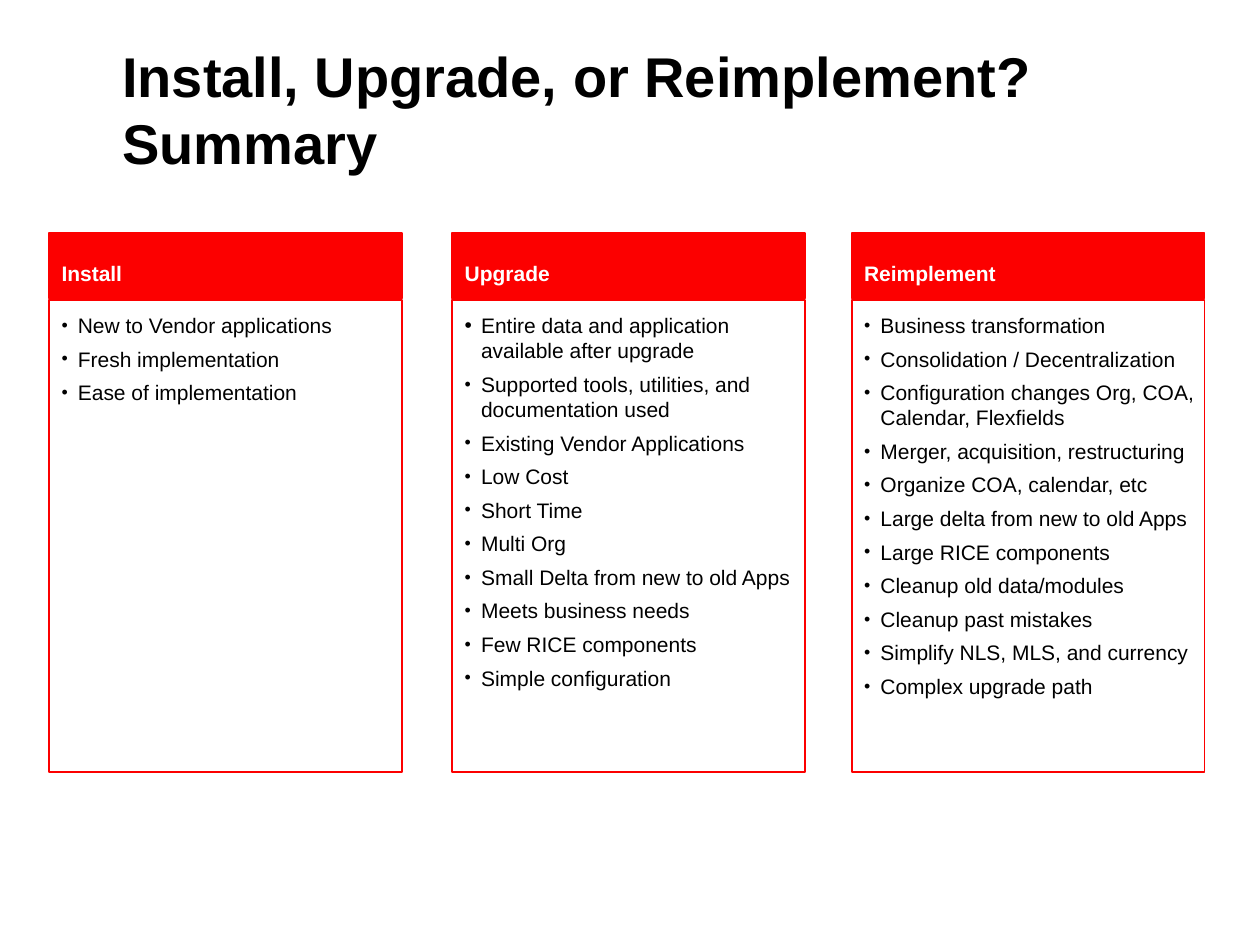
from lxml.etree import SubElement
from pptx import Presentation
from pptx.dml.color import RGBColor
from pptx.enum.shapes import MSO_SHAPE
from pptx.enum.text import MSO_ANCHOR, MSO_AUTO_SIZE, PP_ALIGN
from pptx.oxml.ns import qn
from pptx.util import Inches, Pt

RED, WHITE, BLACK = "FC0000", "FFFFFF", "000000"
HEADER_TOP, HEADER_HEIGHT = 1.85, 0.52
BODY_TOP, BODY_HEIGHT = 2.38, 3.75
COLUMN_WIDTH = 2.8

# left edge, heading, size of the first bullet in percent, points
COLUMNS = [
    (0.39, "Install", 85, [
        "New to Vendor applications",
        "Fresh implementation",
        "Ease of implementation",
    ]),
    (3.59, "Upgrade", 100, [
        "Entire data and application available after upgrade",
        "Supported tools, utilities, and documentation used",
        "Existing Vendor Applications",
        "Low Cost",
        "Short Time",
        "Multi Org",
        "Small Delta from new to old Apps",
        "Meets business needs",
        "Few RICE components",
        "Simple configuration",
    ]),
    (6.76, "Reimplement", 85, [
        "Business transformation",
        "Consolidation / Decentralization",
        "Configuration changes Org, COA, Calendar, Flexfields",
        "Merger, acquisition, restructuring",
        "Organize COA, calendar, etc",
        "Large delta from new to old Apps",
        "Large RICE components",
        "Cleanup old data/modules",
        "Cleanup past mistakes",
        "Simplify NLS, MLS, and currency",
        "Complex upgrade path",
    ]),
]


def color(value):
    return RGBColor.from_string(value)


def set_font(para, size, value, bold=False):
    font = para.font
    font.name = "Arial"
    font.size = Pt(size)
    font.bold = bold
    font.color.rgb = color(value)


def set_frame(frame, left=0, top=0, right=0, bottom=0):
    """Set the insets and let the text start at the top."""
    frame.margin_left, frame.margin_top = Inches(left), Inches(top)
    frame.margin_right, frame.margin_bottom = Inches(right), Inches(bottom)
    frame.word_wrap = True
    frame.auto_size = MSO_AUTO_SIZE.NONE
    frame.vertical_anchor = MSO_ANCHOR.TOP


def add_bullet(para, percent):
    properties = para._p.get_or_add_pPr()
    properties.set("marL", str(Inches(0.13)))
    properties.set("indent", str(-Inches(0.13)))
    SubElement(properties, qn("a:buSzPct")).set("val", str(percent * 1000))
    SubElement(properties, qn("a:buFont")).set("typeface", "Arial")
    SubElement(properties, qn("a:buChar")).set("char", "•")


def add_panel(page, left, top, height, fill):
    """Add a red-edged rectangle and return its text frame."""
    box = page.shapes.add_shape(
        MSO_SHAPE.RECTANGLE, Inches(left), Inches(top),
        Inches(COLUMN_WIDTH), Inches(height))
    box.shadow.inherit = False
    box.fill.solid()
    box.fill.fore_color.rgb = color(fill)
    box.line.color.rgb = color(RED)
    box.line.width = Pt(1)
    set_frame(box.text_frame, 0.1, 0.1, 0.05, 0.05)
    return box.text_frame


def add_header(page, left, heading):
    para = add_panel(page, left, HEADER_TOP, HEADER_HEIGHT, RED).paragraphs[0]
    para.text = heading
    para.alignment = PP_ALIGN.LEFT
    para.line_spacing = 1.6
    set_font(para, 12, WHITE, bold=True)


def add_points(page, left, first_percent, points):
    frame = add_panel(page, left, BODY_TOP, BODY_HEIGHT, WHITE)
    for index, point in enumerate(points):
        para = frame.add_paragraph() if index else frame.paragraphs[0]
        para.text = point
        para.alignment = PP_ALIGN.LEFT
        if index:
            para.space_before = Pt(4.8)
        add_bullet(para, 85 if index else first_percent)
        set_font(para, 12, BLACK)


def set_title(page, text):
    title = page.shapes.title
    title.left, title.top = Inches(0.97), Inches(0.33)
    title.width, title.height = Inches(8.29), Inches(1.03)
    set_frame(title.text_frame)
    para = title.text_frame.paragraphs[0]
    para.text = text
    para.alignment = PP_ALIGN.LEFT
    set_font(para, 32, BLACK, bold=True)


def main():
    deck = Presentation()
    deck.slide_width, deck.slide_height = Inches(10), Inches(7.5)
    page = deck.slides.add_slide(deck.slide_layouts[5])
    set_title(page, "Install, Upgrade, or Reimplement?\vSummary")
    for left, heading, first_percent, points in COLUMNS:
        add_points(page, left, first_percent, points)
        add_header(page, left, heading)
    deck.save("out.pptx")


if __name__ == "__main__":
    main()
